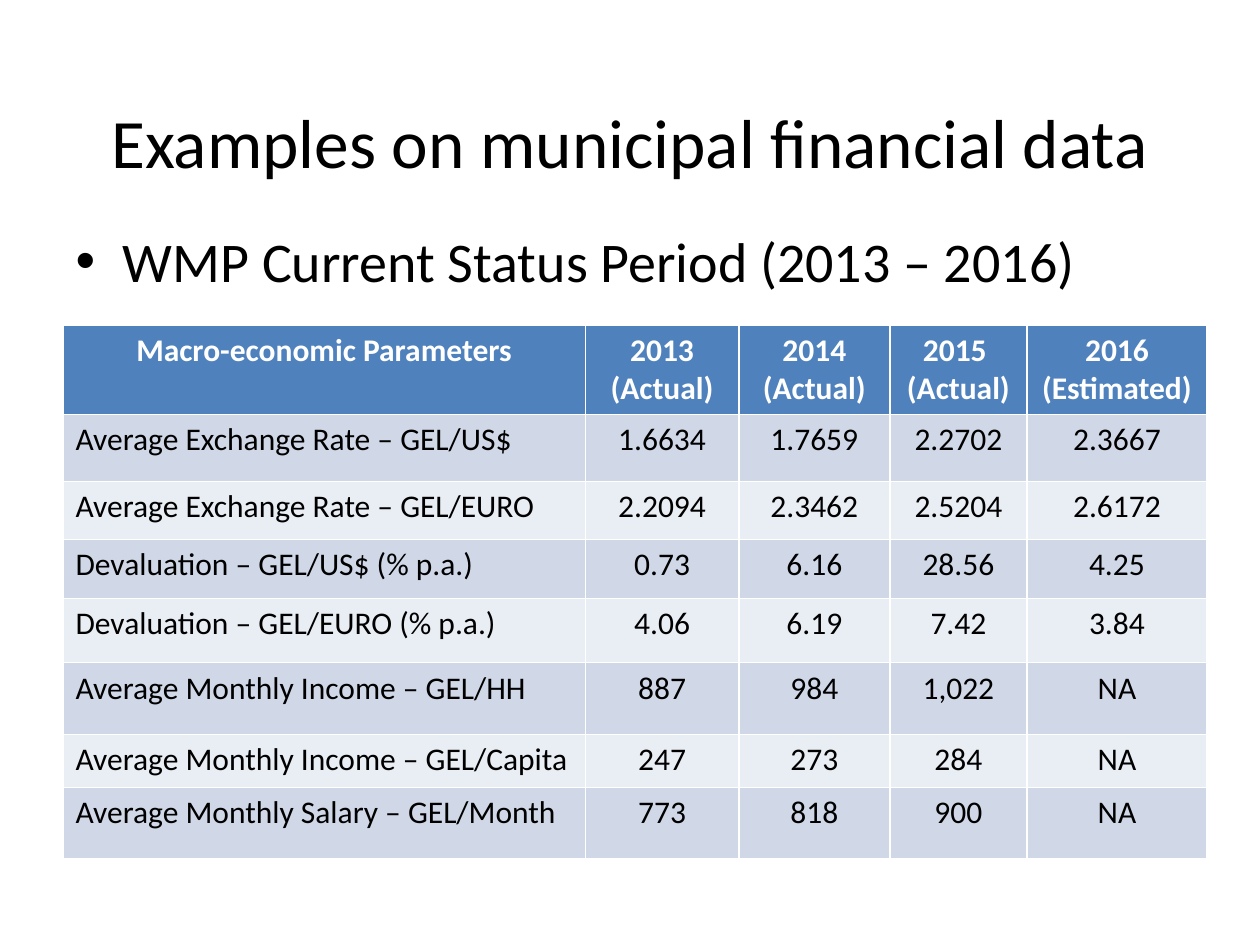
import pptx
import pptx.util
import pptx.dml.color
import pptx.enum.text

Inches = pptx.util.Inches
Pt = pptx.util.Pt
RGBColor = pptx.dml.color.RGBColor
ALIGN = pptx.enum.text.PP_ALIGN
ANCHOR = pptx.enum.text.MSO_ANCHOR
SIZING = pptx.enum.text.MSO_AUTO_SIZE

BLACK = RGBColor(0x00, 0x00, 0x00)
WHITE = RGBColor(0xFF, 0xFF, 0xFF)
BLUE = RGBColor(0x4F, 0x81, 0xBD)
BANDS = [RGBColor(0xE9, 0xED, 0xF4), RGBColor(0xD0, 0xD8, 0xE8)]
FACE = "Calibri"
WIDE, HIGH = 10, 7.5

COLS = [4.15, 1.22, 1.2, 1.09, 1.43]
ROWS = [0.7, 0.53, 0.46, 0.47, 0.51, 0.57, 0.42, 0.57]
DATA = [
    ["Macro-economic Parameters", "2013 (Actual)", "2014 (Actual)",
     "2015 \n(Actual)", "2016 (Estimated)"],
    ["Average Exchange Rate – GEL/US$", "1.6634", "1.7659", "2.2702", "2.3667"],
    ["Average Exchange Rate – GEL/EURO", "2.2094", "2.3462", "2.5204", "2.6172"],
    ["Devaluation – GEL/US$ (% p.a.)", "0.73", "6.16", "28.56", "4.25"],
    ["Devaluation – GEL/EURO (% p.a.)", "4.06", "6.19", "7.42", "3.84"],
    ["Average Monthly Income – GEL/HH", "887", "984", "1,022", "NA"],
    ["Average Monthly Income – GEL/Capita", "247", "273", "284", "NA"],
    ["Average Monthly Salary – GEL/Month", "773", "818", "900", "NA"],
]


def style(para, size, color, align, bold=False):
    para.alignment = align
    font = para.font
    font.name, font.size, font.bold = FACE, Pt(size), bold
    font.color.rgb = color


def place(shape, box):
    shape.left, shape.top, shape.width, shape.height = map(Inches, box)


def add_title(slide, box, text):
    title = slide.shapes.title
    place(title, box)
    frame = title.text_frame
    frame.text = text
    frame.auto_size = SIZING.NONE
    frame.vertical_anchor = ANCHOR.MIDDLE
    style(frame.paragraphs[0], 39.6, BLACK, ALIGN.CENTER)


def add_list(slide, box, items):
    body = slide.placeholders[1]
    place(body, box)
    frame = body.text_frame
    frame.text = "\n".join(items)
    frame.auto_size = SIZING.NONE
    for para in frame.paragraphs:
        style(para, 32, BLACK, ALIGN.LEFT)


def add_grid(slide, box, data):
    table = slide.shapes.add_table(len(ROWS), len(COLS), *map(Inches, box)).table
    for col, share in zip(table.columns, COLS):
        col.width = Inches(box[2] * share / sum(COLS))
    for row, share in zip(table.rows, ROWS):
        row.height = Inches(box[3] * share / sum(ROWS))
    for r, line in enumerate(data):
        head = r == 0
        for c, text in enumerate(line):
            cell = table.cell(r, c)
            cell.text = text
            cell.fill.solid()
            cell.fill.fore_color.rgb = BLUE if head else BANDS[r % 2]
            align = ALIGN.CENTER if head or c else ALIGN.LEFT
            for para in cell.text_frame.paragraphs:
                style(para, 18, WHITE if head else BLACK, align, head)


def main():
    deck = pptx.Presentation()
    deck.slide_width, deck.slide_height = Inches(WIDE), Inches(HIGH)
    slide = deck.slides.add_slide(deck.slide_layouts[1])
    edge = WIDE * 0.05
    span = WIDE - 2 * edge
    add_title(slide, (edge, 0.69, span, 0.86),
              "Examples on municipal financial data")
    add_list(slide, (edge, 1.75, span, 5.2),
             ["WMP Current Status Period (2013 – 2016)"])
    add_grid(slide, (edge, 2.58, 9.08, 4.23), DATA)
    deck.save("out.pptx")


if __name__ == "__main__":
    main()
